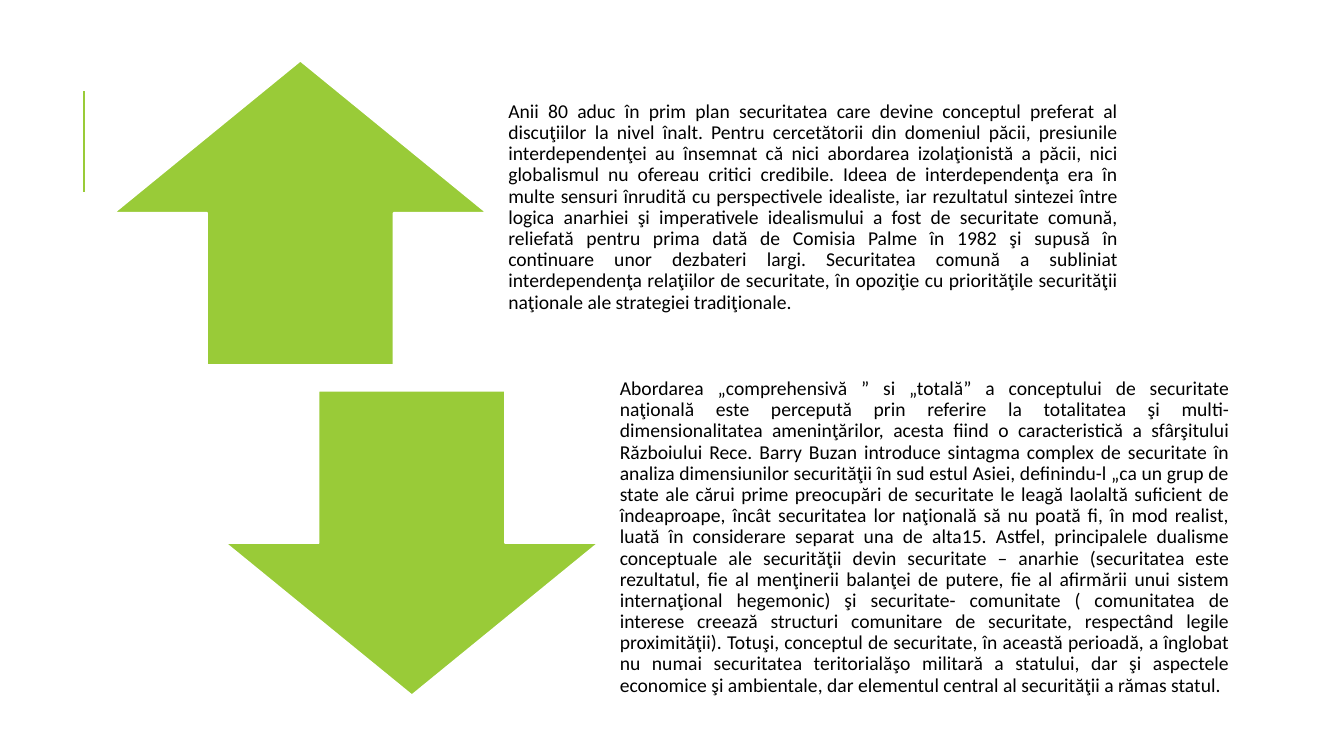
from lxml import etree
from pptx import Presentation
from pptx.dml.color import RGBColor
from pptx.enum import shapes, text
from pptx.oxml.ns import qn
from pptx.util import Cm, Pt

GREEN, WHITE, BLACK = "99CB38", "FFFFFF", "000000"
ARROW_WIDTH, TEXT_WIDTH, ROW_HEIGHT = 9.4, 15.93, 7.67
TEXT_OFFSET = 9.66

COMMON_SECURITY = [
    "Anii 80 aduc în prim plan securitatea care devine conceptul preferat al "
    "discuţiilor la nivel înalt.",
    "Pentru cercetătorii din domeniul păcii, presiunile "
    "interdependenţei au însemnat că nici abordarea izolaţionistă a păcii, nici "
    "globalismul nu ofereau critici credibile.",
    "Ideea de interdependenţa era în "
    "multe sensuri înrudită cu perspectivele idealiste, iar rezultatul sintezei între "
    "logica anarhiei şi imperativele idealismului a fost de securitate comună, "
    "reliefată pentru prima dată de Comisia Palme în 1982 şi supusă în "
    "continuare unor dezbateri largi.",
    "Securitatea comună a subliniat "
    "interdependenţa relaţiilor de securitate, în opoziţie cu priorităţile securităţii "
    "naţionale ale strategiei tradiţionale.",
]
COMPREHENSIVE_SECURITY = [
    "Abordarea „comprehensivă ” si „totală” a conceptului de securitate "
    "naţională este percepută prin referire la totalitatea şi "
    "multi-dimensionalitatea ameninţărilor, acesta fiind o caracteristică a sfârşitului "
    "Războiului Rece.",
    "Barry Buzan introduce sintagma complex de securitate în "
    "analiza dimensiunilor securităţii în sud estul Asiei, definindu-l „ca un grup de "
    "state ale cărui prime preocupări de securitate le leagă laolaltă suficient de "
    "îndeaproape, încât securitatea lor naţională să nu poată fi, în mod realist, "
    "luată în considerare separat una de alta15.",
    "Astfel, principalele dualisme "
    "conceptuale ale securităţii devin securitate – anarhie (securitatea este "
    "rezultatul, fie al menţinerii balanţei de putere, fie al afirmării unui sistem "
    "internaţional hegemonic) şi securitate- comunitate ( comunitatea de "
    "interese creează structuri comunitare de securitate, respectând legile "
    "proximităţii).",
    "Totuşi, conceptul de securitate, în această perioadă, a înglobat "
    "nu numai securitatea teritorialăşo militară a statului, dar şi aspectele "
    "economice şi ambientale, dar elementul central al securităţii a rămas statul.",
]


def color(hex_code):
    return RGBColor.from_string(hex_code)


def add_text(slide, box, words, size=14, font="Calibri", fill=BLACK,
             align=text.PP_ALIGN.JUSTIFY, spacing=0.9):
    frame = slide.shapes.add_textbox(*map(Cm, box)).text_frame
    frame.word_wrap = True
    frame.vertical_anchor = text.MSO_ANCHOR.MIDDLE
    frame.margin_left = frame.margin_right = frame.margin_bottom = Cm(0.28)
    frame.margin_top = 0
    paragraph = frame.paragraphs[0]
    paragraph.alignment = align
    paragraph.line_spacing = spacing
    run = paragraph.add_run()
    run.text = words
    run.font.size = Pt(size)
    run.font.name = font
    run.font.color.rgb = color(fill)


def add_arrow_row(slide, left, top, direction, sentences):
    """Place a block arrow with its explanation to the right."""
    arrow = slide.shapes.add_shape(
        direction, *map(Cm, (left, top, ARROW_WIDTH, ROW_HEIGHT)))
    arrow.shadow.inherit = False
    arrow.fill.solid()
    arrow.fill.fore_color.rgb = color(GREEN)
    arrow.line.color.rgb = color(WHITE)
    arrow.line.width = Pt(1.25)
    add_text(slide, (left + TEXT_OFFSET, top, TEXT_WIDTH, ROW_HEIGHT),
             " ".join(sentences))


def add_accent_line(slide, left, top, height):
    accent = slide.shapes.add_connector(
        shapes.MSO_CONNECTOR.STRAIGHT, *map(Cm, (left, top + height, left, top)))
    accent.line.color.rgb = color(GREEN)
    accent.line.width = Pt(1.5)
    etree.SubElement(accent._element.spPr, qn("a:effectLst"))


def main():
    deck = Presentation()
    deck.slide_width, deck.slide_height = Cm(33.87), Cm(19.05)
    slide = deck.slides.add_slide(deck.slide_layouts[6])
    add_accent_line(slide, 2.12, 2.29, 2.54)
    add_arrow_row(slide, 2.87, 1.53, shapes.MSO_SHAPE.UP_ARROW, COMMON_SECURITY)
    add_arrow_row(slide, 5.68, 9.85, shapes.MSO_SHAPE.DOWN_ARROW, COMPREHENSIVE_SECURITY)
    deck.save("out.pptx")


if __name__ == "__main__":
    main()
